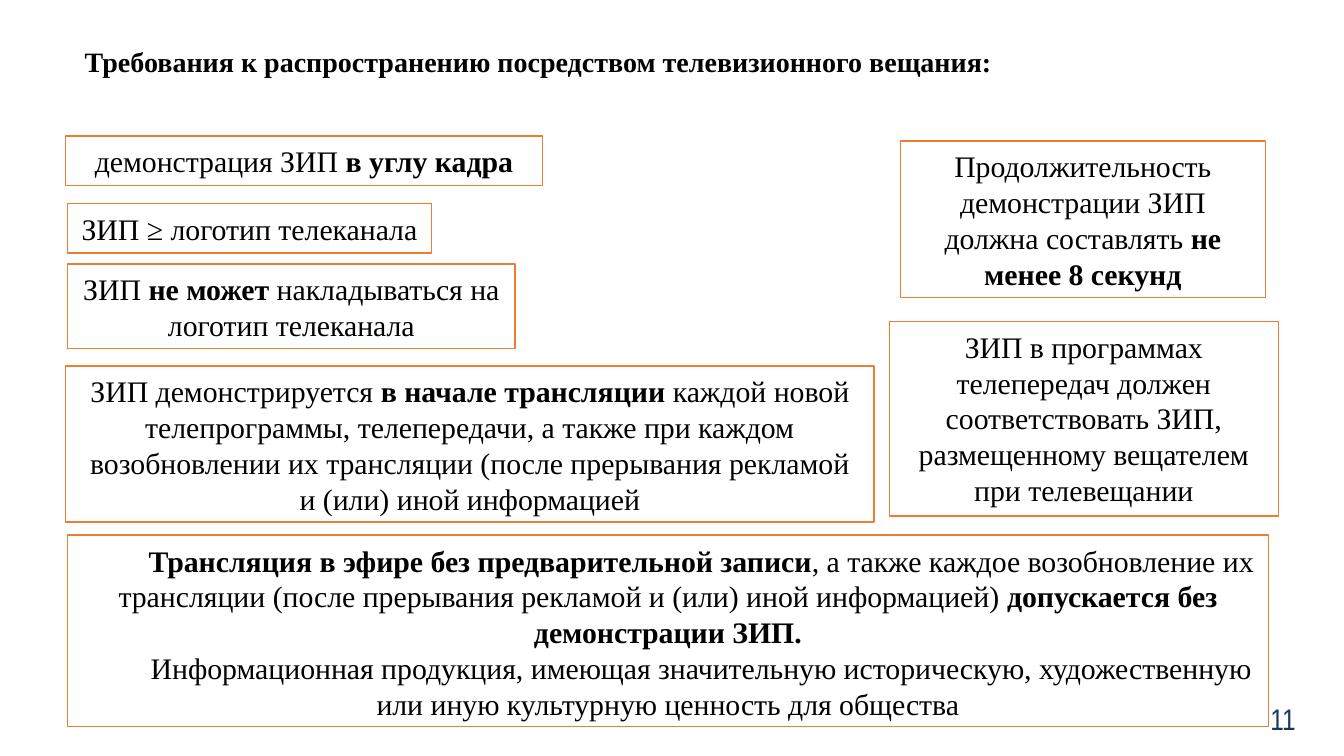
from pptx import Presentation
from pptx.dml.color import RGBColor
from pptx.enum.shapes import MSO_SHAPE
from pptx.enum.text import MSO_ANCHOR, MSO_AUTO_SIZE, PP_ALIGN
from pptx.util import Inches, Pt

COLORS = {"text": "000000", "fill": "FFFFFF", "border": "ED7D31", "number": "17375E"}
SERIF, NARROW = "Times New Roman", "Arial Narrow"

TITLE = "Требования к распространению посредством телевизионного вещания:"
SLIDE_NUMBER = "11"

# Each box: position and size, first-line indent, paragraphs of (text, bold) runs
REQUIREMENTS = [
    ((0.65, 1.35, 4.73, 0.49), 0, [
        [("демонстрация ЗИП ", False), ("в углу кадра", True)]]),
    ((0.67, 2.02, 3.61, 0.49), 0, [
        [("ЗИП ≥ логотип телеканала", False)]]),
    ((8.93, 1.4, 3.62, 1.55), 0, [
        [("Продолжительность демонстрации ЗИП должна составлять ", False),
         ("не менее 8 секунд", True)]]),
    ((0.67, 2.62, 4.44, 0.84), 0, [
        [("ЗИП ", False), ("не может", True),
         (" накладываться на логотип телеканала", False)]]),
    ((0.67, 5.31, 11.91, 1.9), 0.66, [
        [("Трансляция в эфире без предварительной записи", True),
         (", а также каждое возобновление их трансляции (после прерывания "
          "рекламой и (или) иной информацией) ", False),
         ("допускается без демонстрации ЗИП.", True)],
        [("Информационная продукция, имеющая значительную историческую, "
          "художественную или иную культурную ценность для общества", False)]]),
    ((0.65, 3.63, 8.02, 1.55), 0, [
        [("ЗИП демонстрируется ", False), ("в начале трансляции", True),
         (" каждой новой телепрограммы, телепередачи, а также при каждом "
          "возобновлении их трансляции (после прерывания рекламой и (или) "
          "иной информацией", False)]]),
    ((8.82, 3.19, 3.86, 1.93), 0, [
        [("ЗИП в программах телепередач должен соответствовать ЗИП, "
          "размещенному вещателем при телевещании", False)]]),
]


def write_text(shape, paragraphs, size=21.3, font=SERIF, color="text",
               align=PP_ALIGN.CENTER, anchor=MSO_ANCHOR.TOP,
               margins=(0.13, 0.07), indent=0, line_spacing=None):
    frame = shape.text_frame
    frame.word_wrap = True
    frame.auto_size = MSO_AUTO_SIZE.NONE
    frame.vertical_anchor = anchor
    frame.margin_left = frame.margin_right = Inches(margins[0])
    frame.margin_top = frame.margin_bottom = Inches(margins[1])
    for index, runs in enumerate(paragraphs):
        paragraph = frame.add_paragraph() if index else frame.paragraphs[0]
        paragraph.alignment = align
        paragraph.line_spacing = line_spacing
        if indent:
            properties = paragraph._p.get_or_add_pPr()
            properties.set("marL", "0")
            properties.set("indent", str(Inches(indent)))
        for text, bold in runs:
            run = paragraph.add_run()
            run.text = text
            run.font.name = font
            run.font.size = Pt(size)
            run.font.bold = bold
            run.font.color.rgb = RGBColor.from_string(COLORS[color])


def add_requirement(slide, place, indent, paragraphs):
    box = slide.shapes.add_shape(MSO_SHAPE.RECTANGLE, *map(Inches, place))
    box.shadow.inherit = False
    box.fill.solid()
    box.fill.fore_color.rgb = RGBColor.from_string(COLORS["fill"])
    box.line.color.rgb = RGBColor.from_string(COLORS["border"])
    box.line.width = Pt(1)
    write_text(box, paragraphs, indent=indent)


def main():
    presentation = Presentation()
    presentation.slide_width = Inches(13.33)
    presentation.slide_height = Inches(7.5)
    slide = presentation.slides.add_slide(presentation.slide_layouts[5])

    # Slide number
    number = slide.shapes.add_textbox(*map(Inches, (9.84, 6.93, 3.11, 0.4)))
    write_text(number, [[(SLIDE_NUMBER, False)]], font=NARROW, color="number",
               align=PP_ALIGN.RIGHT, anchor=MSO_ANCHOR.MIDDLE, margins=(0.1, 0.05))

    # Title
    title = slide.shapes.title
    title.left, title.top, title.width, title.height = map(Inches, (0.74, 0, 11.73, 1.25))
    write_text(title, [[(TITLE, True)]], size=20, align=PP_ALIGN.LEFT,
               anchor=MSO_ANCHOR.MIDDLE, margins=(0.1, 0.05), line_spacing=0.9)

    # Requirement boxes
    for place, indent, paragraphs in REQUIREMENTS:
        add_requirement(slide, place, indent, paragraphs)

    presentation.save("out.pptx")


if __name__ == "__main__":
    main()
